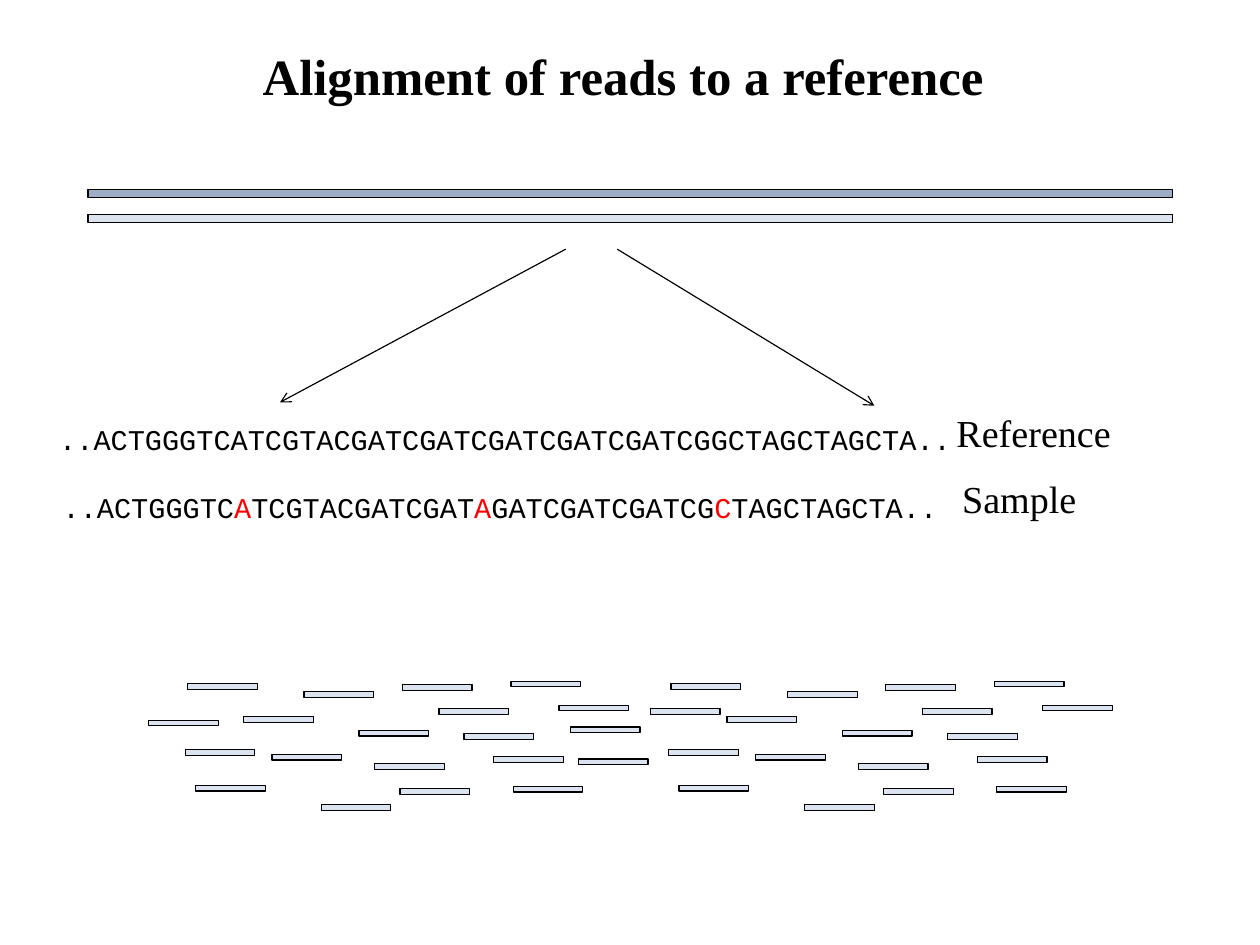
from pptx import Presentation
from pptx.dml.color import RGBColor as RGB
from pptx.enum.shapes import MSO_CONNECTOR as CONN, MSO_SHAPE as FORM
from pptx.enum.text import MSO_ANCHOR as ANCHOR, PP_ALIGN as ALIGN
from pptx.oxml.ns import qn
from pptx.util import Inches, Pt
from lxml.etree import SubElement as sub

INK, RED, DARK, PALE = "000000", "FF0000", "9DADC6", "DBE3F0"
SERIF, MONO = "Times New Roman", "Courier New"
WIDE, HIGH = 28 / 2.54, 21 / 2.54

READS = [
    (2.38, 6.6), (3.28, 6.68), (2.81, 7.04), (3.84, 6.2), (3.14, 6.39), (4.06, 6.42),
    (3.5, 6.9), (2.13, 6.27), (1.62, 6.56), (1.71, 6.87), (1.64, 5.98), (2.66, 6.05),
    (3.52, 5.99), (4.47, 5.96), (4.89, 6.17), (4.32, 6.62), (4.49, 6.88),
]
LONE = [(1.3, 6.3), (4.99, 6.36), (5.06, 6.64), (5.69, 6.2)]
SHIFT = 4.23


def color(code):
    """Turn a hex string into a colour."""
    return RGB.from_string(code)


def put(item, form):
    """Set each attribute named in a dict."""
    for name, value in form.items():
        setattr(item, name, value)


def bar(slide, box, fill):
    """Draw one outlined strand."""
    shape = slide.shapes.add_shape(FORM.RECTANGLE, *map(Inches, box))
    shape.shadow.inherit = False
    shape.fill.solid()
    shape.fill.fore_color.rgb = color(fill)
    shape.line.color.rgb = color(INK)
    shape.line.width = Pt(0.75)


def text(slide, box, words, font, frame=None, para=None):
    """Write one line, with the parts between bars in red."""
    area = slide.shapes.add_textbox(*map(Inches, box)).text_frame
    put(area, {"word_wrap": True, **(frame or {})})
    line = area.paragraphs[0]
    put(line, {"line_spacing": 0.93, **(para or {})})
    for i, part in enumerate(words.split("|")):
        run = line.add_run()
        run.text = part
        put(run.font, font)
        run.font.color.rgb = color(RED if i % 2 else INK)


def arrow(slide, start, end):
    """Draw a thin line with an open arrowhead at its end."""
    line = slide.shapes.add_connector(CONN.STRAIGHT, *map(Inches, start + end))
    line.line.color.rgb = color(INK)
    line.line.width = Pt(0.75)
    sub(line.line._get_or_add_ln(), qn("a:tailEnd"), type="arrow")
    sub(line._element.spPr, qn("a:effectLst"))


def title(slide, box):
    """Write the centred heading."""
    sides = ("margin_left", "margin_top", "margin_right", "margin_bottom")
    text(slide, box, "Alignment of reads to a reference",
         {"name": SERIF, "size": Pt(32), "bold": True},
         {"vertical_anchor": ANCHOR.MIDDLE, **dict.fromkeys(sides, 0)},
         {"alignment": ALIGN.CENTER})


def genome(slide, box):
    """Draw the two long strands and the arrows below them."""
    x, y, w, h = box
    for step, fill in enumerate((DARK, PALE)):
        bar(slide, (x, y + 0.22 * step, w, h), fill)
    top = y + 0.52
    arrow(slide, (x + 4.18, top), (x + 1.68, top + 1.34))
    arrow(slide, (x + 4.63, top), (x + 6.88, top + 1.37))


def bases(slide, box):
    """Write the two sequences and their labels."""
    x, y, w, h = box
    rows = [
        (0.42, 0.1, "..ACTGGGTCATCGTACGATCGATCGATCGATCGATCGGCTAGCTAGCTA.."),
        (0.45, 0.69, "..ACTGGGTC|A|TCGTACGATCGAT|A|GATCGATCGATCG|C|TAGCTAGCTA.."),
    ]
    for dx, dy, code in rows:
        text(slide, (x + dx, y + dy, w, h), code, {"name": MONO, "size": Pt(18)})
    for dx, dy, label in [(8.27, 0, "Reference"), (8.32, 0.58, "Sample")]:
        text(slide, (x + dx, y + dy, 2.63, 0.48), label, {"name": SERIF, "size": Pt(24)})


def reads(slide, size):
    """Scatter the short reads, most of them in both halves."""
    twins = [(x + SHIFT, y) for x, y in READS]
    for spot in READS + LONE + twins:
        bar(slide, spot + size, PALE)


def main():
    """Build and save the slide."""
    deck = Presentation()
    put(deck, {"slide_width": Inches(WIDE), "slide_height": Inches(HIGH)})
    slide = deck.slides.add_slide(deck.slide_layouts[6])
    title(slide, (0.75, 0, 9.41, 1.38))
    genome(slide, (0.77, 1.66, 9.49, 0.07))
    reads(slide, (0.61, 0.05))
    bases(slide, (0, 3.57, 8.2, 0.39))
    deck.save("out.pptx")


if __name__ == "__main__":
    main()
